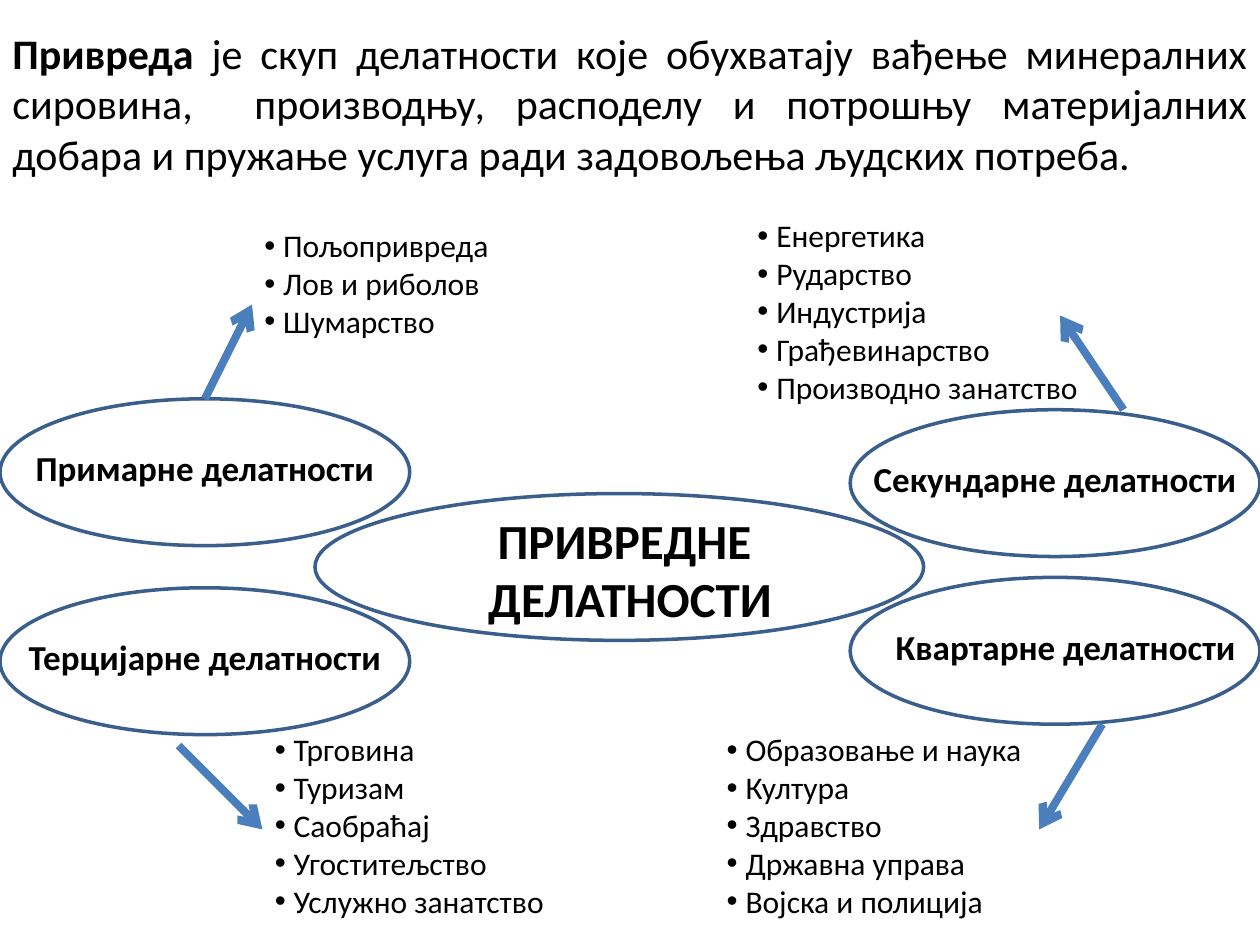
from dataclasses import dataclass

from lxml import etree
from pptx import Presentation
from pptx.dml.color import RGBColor
from pptx.enum.shapes import MSO_CONNECTOR, MSO_SHAPE
from pptx.enum.text import MSO_AUTO_SIZE, PP_ALIGN
from pptx.oxml.ns import qn
from pptx.util import Cm, Pt

STRAIGHT = MSO_CONNECTOR.STRAIGHT
OVAL = MSO_SHAPE.OVAL
GROW = MSO_AUTO_SIZE.SHAPE_TO_FIT_TEXT
LEFT, CENTER, JUSTIFY = PP_ALIGN.LEFT, PP_ALIGN.CENTER, PP_ALIGN.JUSTIFY

FONT = "Calibri"
COLORS = {"text": "000000", "outline": "3A5F8C", "arrow": "4B7EBC"}
PAGE_WIDTH, PAGE_HEIGHT = 25.4, 19.05
OVAL_WIDTH, OVAL_HEIGHT = 8.26, 2.96
BULLET_INDENT = 0.38

TERM = "Привреда"
DEFINITION = (
    " је скуп делатности које обухватају вађење минералних сировина,  "
    "производњу, расподелу и потрошњу материјалних добара и пружање "
    "услуга ради задовољења људских потреба."
)


@dataclass
class Sector:
    """One group of activities; list and arrow are offsets from its box."""

    title: str
    box: tuple
    label_inset: float
    list_box: tuple
    arrow: tuple
    items: list


SECTORS = [
    Sector("Примарне делатности", (0, 8.04), 0, (5.08, -3.6, 6.78, 2.57),
           (4.13, 0, 5.08, -1.9),
           ["Пољопривреда", "Лов и риболов", "Шумарство"]),
    Sector("Секундарне делатности", (17.14, 8.26), 0, (-2.12, -4.02, 7.2, 4.11),
           (5.51, 0, 4.23, -1.9),
           ["Енергетика", "Рударство", "Индустрија", "Грађевинарство",
            "Производно занатство"]),
    Sector("Терцијарне делатности", (0, 11.85), 0, (5.29, 2.75, 6.98, 4.88),
           (3.6, 3.18, 5.29, 4.87),
           ["Трговина", "Туризам", "Саобраћај", "Угоститељство",
            "Услужно занатство"]),
    Sector("Квартарне делатности", (17.14, 11.64), 0.43, (-2.74, 2.96, 6.98, 4.11),
           (5.08, 2.96, 3.81, 5.08),
           ["Образовање и наука", "Култура", "Здравство", "Државна управа",
            "Војска и полиција"]),
]


def rgb(name):
    """Return the named colour."""
    return RGBColor.from_string(COLORS[name])


def add_bullet(para):
    """Give a paragraph a hanging round bullet."""
    props = para._p.get_or_add_pPr()
    props.set("marL", str(Cm(BULLET_INDENT)))
    props.set("indent", str(-Cm(BULLET_INDENT)))
    etree.SubElement(props, qn("a:buFont")).set("typeface", "Arial")
    etree.SubElement(props, qn("a:buChar")).set("char", "•")


def add_text(page, box, lines, size, align=LEFT, bold=None, bullets=False):
    """Add a text box with one paragraph per line and return its paragraphs."""
    frame = page.shapes.add_textbox(*map(Cm, box)).text_frame
    frame.word_wrap = True
    frame.auto_size = GROW
    frame.text = "\n".join(lines)
    for para in frame.paragraphs:
        para.alignment = align
        if bullets:
            add_bullet(para)
        para.font.name = FONT
        para.font.size = Pt(size)
        para.font.bold = bold
        para.font.color.rgb = rgb("text")
    return frame.paragraphs


def add_oval(page, box):
    """Add an unfilled outlined oval."""
    oval = page.shapes.add_shape(OVAL, *map(Cm, box))
    oval.shadow.inherit = False
    oval.fill.background()
    oval.line.color.rgb = rgb("outline")
    oval.line.width = Pt(2)


def add_arrow(page, ends):
    """Add a thick arrow from the first point to the second."""
    arrow = page.shapes.add_connector(STRAIGHT, *map(Cm, ends))
    arrow.line.color.rgb = rgb("arrow")
    arrow.line.width = Pt(4.5)
    etree.SubElement(arrow.line._get_or_add_ln(), qn("a:tailEnd")).set("type", "arrow")
    etree.SubElement(arrow._element.spPr, qn("a:effectLst"))


def add_definition(page, box):
    """Add the justified definition with its term in bold."""
    para = add_text(page, box, [TERM], 24, JUSTIFY)[0]
    para.runs[0].font.bold = True
    para.add_run().text = DEFINITION


def add_center(page, box):
    """Add the central oval with the page-wide title over it."""
    left, top, width, height = box
    add_text(page, (0, top + 0.21, PAGE_WIDTH, 2.64),
             ["ПРИВРЕДНЕ ", "ДЕЛАТНОСТИ"], 28, CENTER, bold=True)
    add_oval(page, (left, top, width, height))


def add_sector(page, sector):
    """Add a sector's oval, label, list of activities and arrow."""
    left, top = sector.box
    inset = sector.label_inset
    x, y, width, height = sector.list_box
    x1, y1, x2, y2 = sector.arrow
    add_text(page, (left + inset, top + 0.84, OVAL_WIDTH - inset, 1.12),
             [sector.title], 20, CENTER, bold=True)
    add_oval(page, (left, top, OVAL_WIDTH, OVAL_HEIGHT))
    add_text(page, (left + x, top + y, width, height), sector.items, 18, bullets=True)
    add_arrow(page, (left + x1, top + y1, left + x2, top + y2))


def main():
    """Build and save the deck."""
    deck = Presentation()
    deck.slide_width, deck.slide_height = Cm(PAGE_WIDTH), Cm(PAGE_HEIGHT)
    page = deck.slides.add_slide(deck.slide_layouts[6])
    add_definition(page, (0, 0.43, PAGE_WIDTH, 3.33))
    add_center(page, (6.35, 9.95, 12.27, OVAL_HEIGHT))
    for sector in SECTORS:
        add_sector(page, sector)
    deck.save("out.pptx")


if __name__ == "__main__":
    main()
